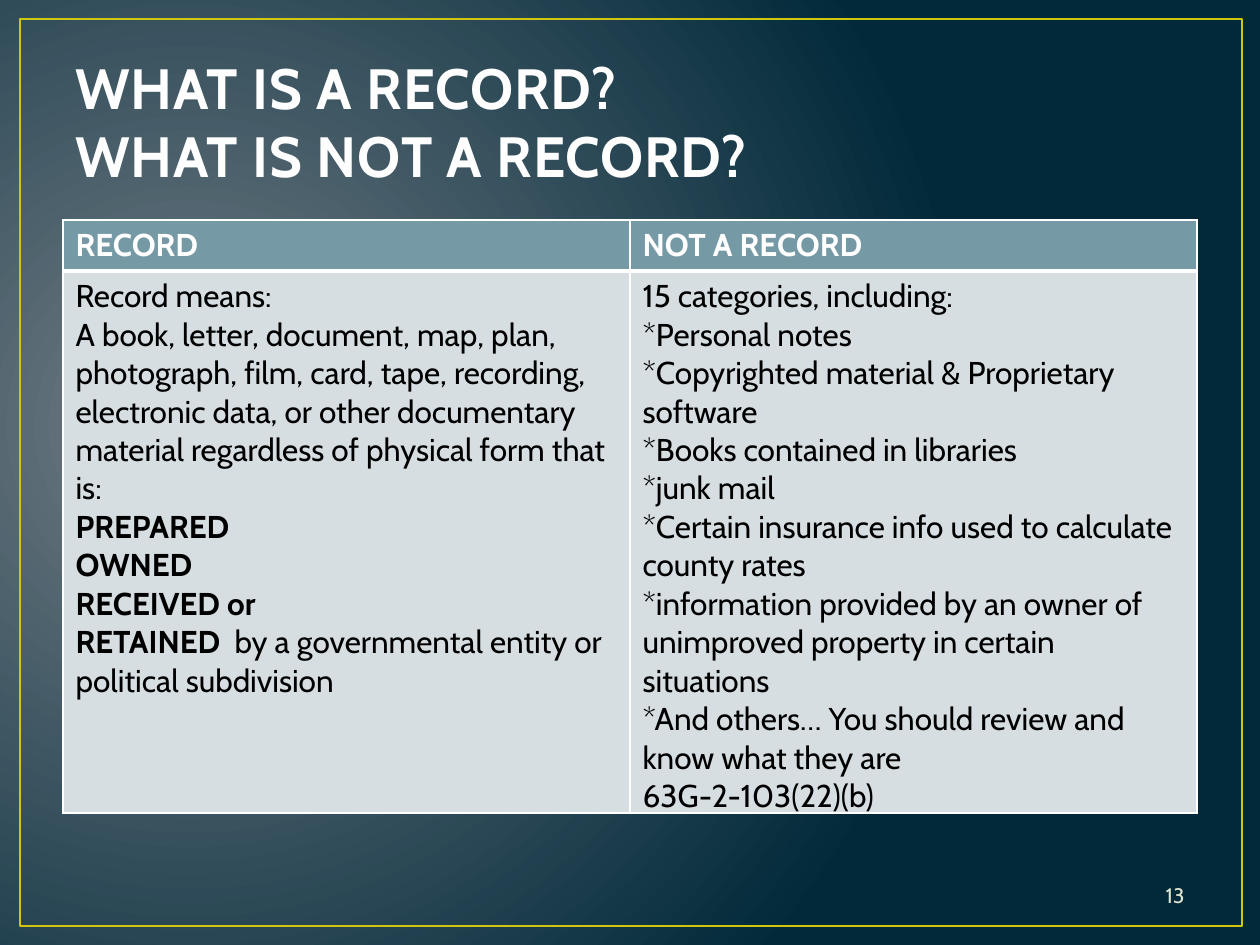
from pptx import Presentation
from pptx.dml.color import RGBColor
from pptx.enum.shapes import MSO_SHAPE
from pptx.enum.text import MSO_ANCHOR, PP_ALIGN
from pptx.oxml import parse_xml
from pptx.oxml.ns import nsdecls
from pptx.util import Emu, Pt

RECTANGLE = MSO_SHAPE.RECTANGLE
TOP, MIDDLE, BOTTOM = MSO_ANCHOR.TOP, MSO_ANCHOR.MIDDLE, MSO_ANCHOR.BOTTOM
LEFT, RIGHT = PP_ALIGN.LEFT, PP_ALIGN.RIGHT
EMU_PER_PX = 914400 / 126

TITLE = dict(size=Pt(32.4), bold=True, color="FEFEFE")
HEADER = dict(size=Pt(18), bold=True, color="FFFFFF")
BODY = dict(size=Pt(18), bold=False, color="000000")
STRONG = BODY | dict(bold=True)
NUMBER = dict(size=Pt(12), color="DFE6D0")

RECORD = [
    [("Record means:", BODY)],
    [("A book, letter, document, map, plan, photograph, film, card, tape, "
      "recording, electronic data, or other documentary material regardless "
      "of physical form that is:", BODY)],
    [("PREPARED", STRONG)],
    [("OWNED", STRONG)],
    [("RECEIVED or", STRONG)],
    [("RETAINED ", STRONG),
     (" by a governmental entity or political subdivision", BODY)],
]
NOT_A_RECORD = [[(line, BODY)] for line in (
    "15 categories, including:",
    "*Personal notes",
    "*Copyrighted material & Proprietary software",
    "*Books contained in libraries",
    "*junk mail",
    "*Certain insurance info used to calculate county rates",
    "*information provided by an owner of unimproved property in certain situations",
    "*And others… You should review and know what they are",
    "63G-2-103(22)(b)",
)]


def px(length):
    return Emu(round(length * EMU_PER_PX))


def rgb(color):
    return RGBColor.from_string(color)


class SlideBuilder:
    font = "Cabin"
    border = "FFFFFF"

    def __init__(self, slide):
        self.slide = slide

    def background(self, inner, outer):
        """Fill the slide with a circular gradient centred near the left edge."""
        self.slide._element.cSld.insert(0, parse_xml(
            f'<p:bg {nsdecls("p", "a")}><p:bgPr><a:gradFill rotWithShape="1"><a:gsLst>'
            f'<a:gs pos="0"><a:srgbClr val="{inner}"/></a:gs>'
            f'<a:gs pos="100000"><a:srgbClr val="{outer}"/></a:gs></a:gsLst>'
            '<a:path path="circle"><a:fillToRect l="15000" t="50000" r="85000" b="60000"/>'
            '</a:path></a:gradFill><a:effectLst/></p:bgPr></p:bg>'))

    def frame(self, left, top, width, height, color, weight):
        shape = self.slide.shapes.add_shape(
            RECTANGLE, px(left), px(top), px(width), px(height))
        shape.shadow.inherit = False
        shape.fill.background()
        shape.line.color.rgb = rgb(color)
        shape.line.width = Pt(weight)

    def fill_text(self, text_frame, paragraphs, align=LEFT, spacing=0):
        for index, spans in enumerate(paragraphs):
            para = text_frame.paragraphs[0] if index == 0 else text_frame.add_paragraph()
            para.alignment = align
            for text, style in spans:
                span = para.add_run()
                span.text = text
                span.font.name = self.font
                for name, value in style.items():
                    if name == "color":
                        span.font.color.rgb = rgb(value)
                    else:
                        setattr(span.font, name, value)
                if spacing:
                    span.font._element.set("spc", str(spacing))

    def text(self, left, top, width, height, paragraphs, anchor=TOP, **layout):
        box = self.slide.shapes.add_textbox(px(left), px(top), px(width), px(height))
        box.text_frame.word_wrap = True
        box.text_frame.vertical_anchor = anchor
        self.fill_text(box.text_frame, paragraphs, **layout)

    def cell(self, cell, paragraphs, fill, bottom_weight):
        for side, weight in zip("LRTB", (1, 1, 1, bottom_weight)):
            cell._tc.get_or_add_tcPr().append(parse_xml(
                f'<a:ln{side} {nsdecls("a")} w="{Pt(weight)}"><a:solidFill>'
                f'<a:srgbClr val="{self.border}"/></a:solidFill></a:ln{side}>'))
        cell.fill.solid()
        cell.fill.fore_color.rgb = rgb(fill)
        self.fill_text(cell.text_frame, paragraphs)

    def table(self, left, top, width, heights, rows, fills, bottom_weights):
        table = self.slide.shapes.add_table(
            len(rows), len(rows[0]), px(left), px(top), px(width), px(sum(heights))).table
        for row, height, contents, fill, weight in zip(
                table.rows, heights, rows, fills, bottom_weights):
            row.height = px(height)
            for cell, paragraphs in zip(row.cells, contents):
                self.cell(cell, paragraphs, fill, weight)


def main():
    deck = Presentation()
    deck.slide_width, deck.slide_height = px(1260), px(945)
    page = SlideBuilder(deck.slides.add_slide(deck.slide_layouts[6]))
    page.background("717C84", "01293A")
    page.frame(20, 19, 1222, 907, "CFC60D", 1.5)
    page.text(63, 38, 1134, 157,
              [[("WHAT IS A RECORD?", TITLE)], [("WHAT IS NOT A RECORD?", TITLE)]],
              anchor=BOTTOM, spacing=50)
    headers = [[[(label, HEADER)]] for label in ("RECORD", "NOT A RECORD")]
    page.table(63, 220, 1134, (51, 504), [headers, [RECORD, NOT_A_RECORD]],
               fills=("759AA5", "D6DEE1"), bottom_weights=(3, 1))
    page.text(903, 870, 294, 50, [[("13", NUMBER)]], anchor=MIDDLE, align=RIGHT)
    deck.save("out.pptx")


if __name__ == "__main__":
    main()
